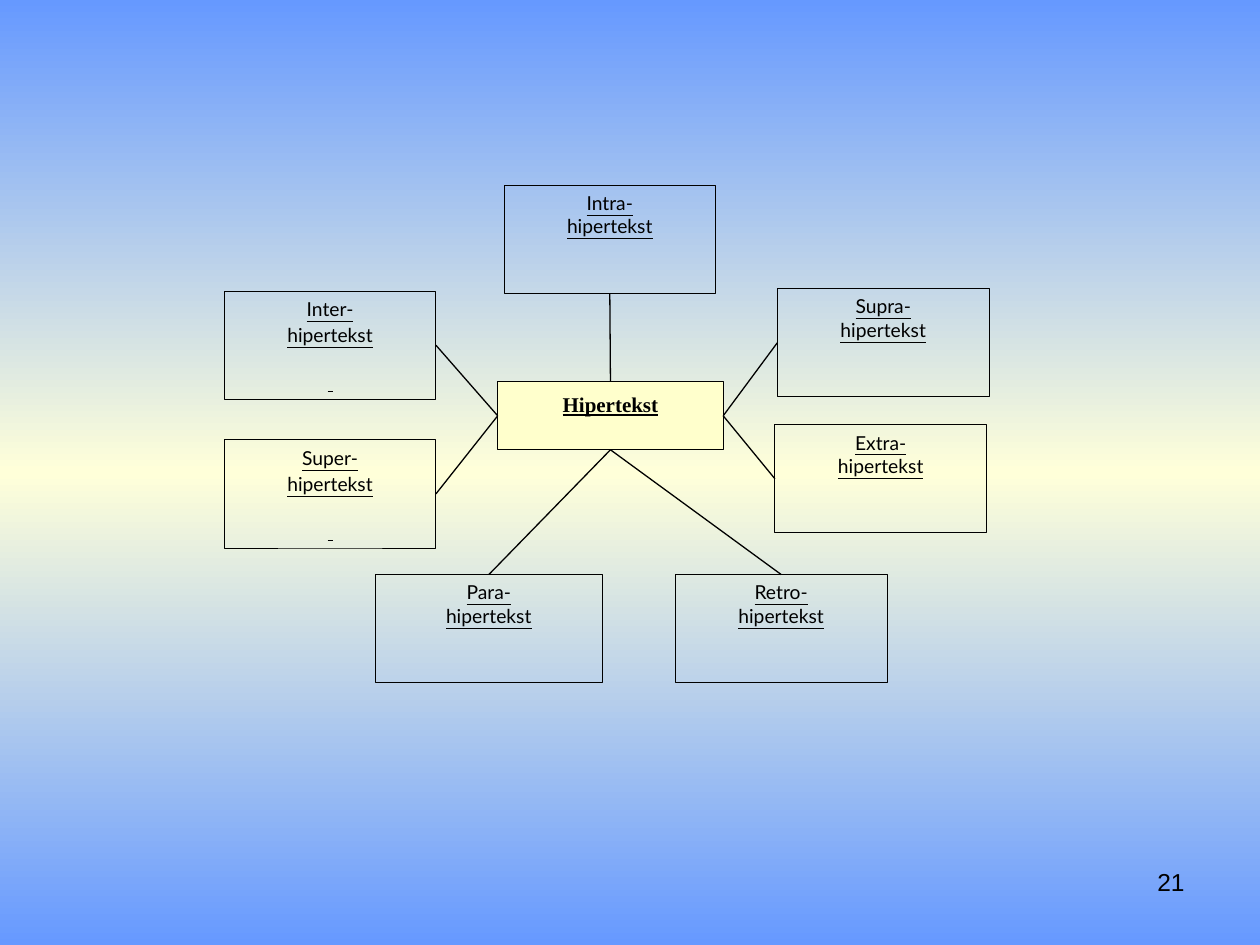
from copy import deepcopy
from dataclasses import dataclass

from pptx import Presentation
from pptx.dml.color import RGBColor
from pptx.enum.shapes import MSO_CONNECTOR, MSO_SHAPE
from pptx.enum.text import MSO_ANCHOR, PP_ALIGN
from pptx.oxml.ns import qn
from pptx.oxml.xmlchemy import OxmlElement
from pptx.util import Inches, Pt


@dataclass(frozen=True)
class Theme:
    ink: RGBColor = RGBColor(0, 0, 0)
    center_fill: RGBColor = RGBColor(0xFF, 0xFF, 0xCC)
    edge: RGBColor = RGBColor(0x66, 0x99, 0xFF)
    middle: RGBColor = RGBColor(0xFF, 0xFF, 0xD9)
    label_size: Pt = Pt(11)
    center_size: Pt = Pt(12)
    number_size: Pt = Pt(14)
    box_line: Pt = Pt(0.5)
    link_line: Pt = Pt(0.75)


THEME = Theme()
TOP, LEFT, BOTTOM, RIGHT = range(4)  # connection sites of a rectangle
BOX_W, BOX_H = 1.68, 0.86


def style_text(tf, font, size, align=PP_ALIGN.CENTER, underline=True, bold=False):
    tf.word_wrap = True
    tf.vertical_anchor = MSO_ANCHOR.TOP
    for p in tf.paragraphs:
        p.alignment = align
        for r in p.runs:
            r.font.name = font
            r.font.size = size
            r.font.color.rgb = THEME.ink
            r.font.underline = underline
            r.font.bold = bold


def add_box(s, left, top, width, height, text, loose_from):
    """Add an outlined box; paragraphs from loose_from on get wider spacing."""
    sp = s.shapes.add_shape(MSO_SHAPE.RECTANGLE, Inches(left), Inches(top),
                            Inches(width), Inches(height))
    sp.shadow.inherit = False
    sp.fill.background()
    sp.line.color.rgb = THEME.ink
    sp.line.width = THEME.box_line
    sp.text_frame.text = text
    for p in sp.text_frame.paragraphs[loose_from:]:
        p.line_spacing = 1.15
        p.space_after = Pt(10)
    return sp


prs = Presentation()
prs.slide_width, prs.slide_height = Inches(10), Inches(7.5)
s = prs.slides.add_slide(prs.slide_layouts[6])

# Background: blue at top and bottom, cream in the middle
bg = s.background.fill
bg.gradient()
bg.gradient_angle = 270
stops = next(s.element.iter(qn("a:gsLst")))
stops.insert(1, deepcopy(stops[0]))
for stop, position, color in zip(bg.gradient_stops, (0, 0.5, 1),
                                 (THEME.edge, THEME.middle, THEME.edge)):
    stop.position = position
    stop.color.rgb = color

# Slide number
number = s.shapes.add_textbox(Inches(7.17), Inches(6.83), Inches(2.33), Inches(0.52))
number.text_frame.text = "21"
style_text(number.text_frame, "Arial", THEME.number_size, PP_ALIGN.RIGHT, underline=False)

# Central concept
center = add_box(s, 3.95, 3.03, 1.79, 0.54, "Hipertekst", loose_from=0)
center.fill.solid()
center.fill.fore_color.rgb = THEME.center_fill
style_text(center.text_frame, "Times New Roman", THEME.center_size, bold=True)

# Kinds of hypertext: prefix, left, top, width, own site, site on the center
kinds = [
    ("Intra-", 4.00, 1.47, BOX_W, BOTTOM, TOP),
    ("Inter-", 1.78, 2.31, BOX_W, RIGHT, LEFT),
    ("Super-", 1.78, 3.49, BOX_W, RIGHT, LEFT),
    ("Supra-", 6.17, 2.29, BOX_W, LEFT, RIGHT),
    ("Extra-", 6.15, 3.37, BOX_W, LEFT, RIGHT),
    ("Para-", 2.98, 4.56, 1.80, TOP, BOTTOM),
    ("Retro-", 5.36, 4.56, BOX_W, TOP, BOTTOM),
]
for prefix, left, top, width, own_site, center_site in kinds:
    text = f"{prefix}\nhipertekst"
    loose = center_site == LEFT
    if loose:
        text += "\n "  # underlined no-break space
    box = add_box(s, left, top, width, BOX_H, text, loose_from=1 if loose else 2)
    style_text(box.text_frame, "Lato", THEME.label_size)

    link = s.shapes.add_connector(MSO_CONNECTOR.STRAIGHT, 0, 0, 0, 0)
    link.begin_connect(box, own_site)
    link.end_connect(center, center_site)
    link.line.color.rgb = THEME.ink
    link.line.width = THEME.link_line
    link.element.spPr.append(OxmlElement("a:effectLst"))

prs.save("out.pptx")
